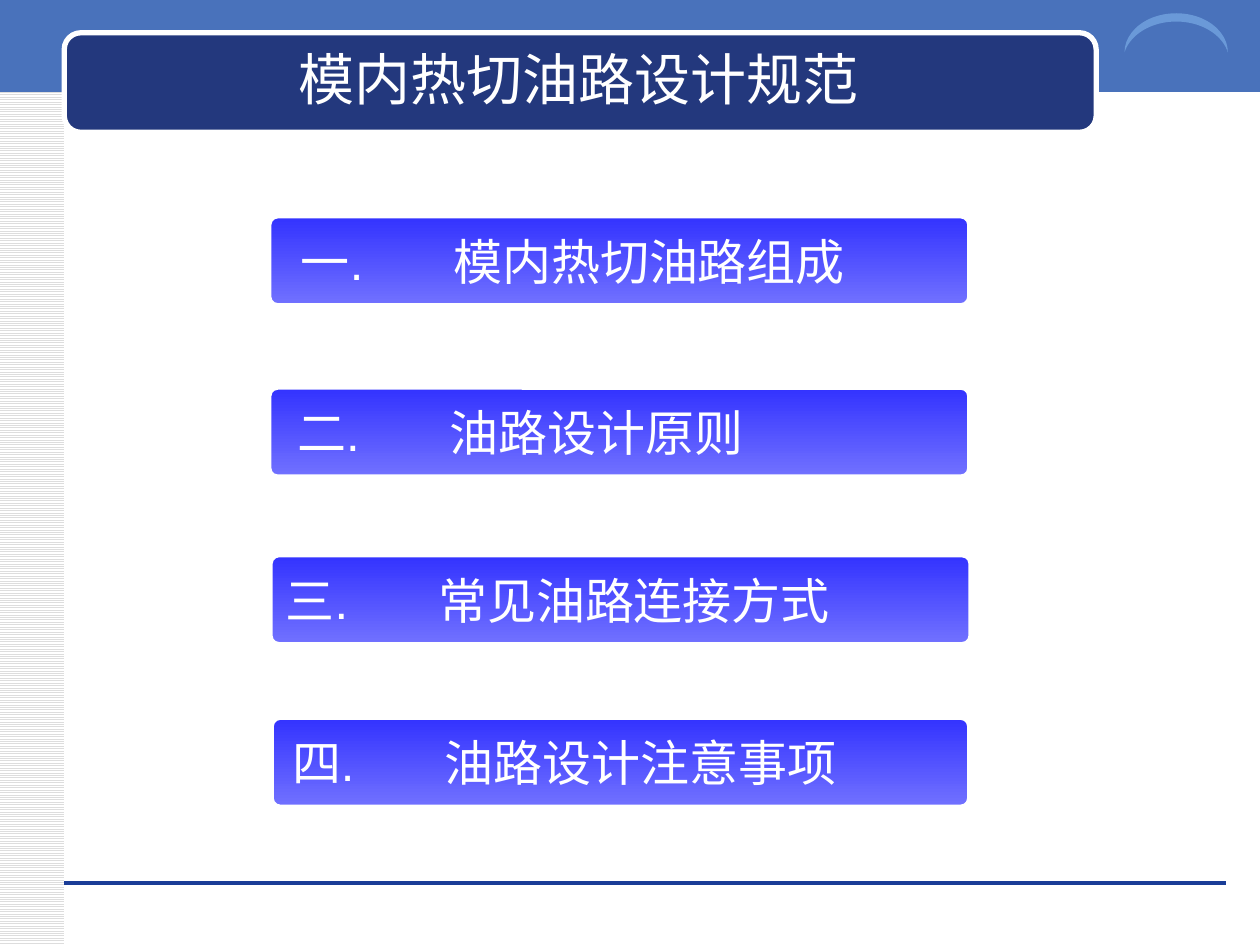
from pptx import Presentation
from pptx.dml.color import RGBColor
from pptx.enum.dml import MSO_PATTERN
from pptx.enum.shapes import MSO_CONNECTOR, MSO_SHAPE as Preset
from pptx.enum.text import MSO_ANCHOR, PP_ALIGN
from pptx.oxml.ns import qn
from pptx.util import Inches, Pt
from lxml.etree import SubElement

TITLE = "模内热切油路设计规范"
# number, topic, bar left, bar top, bar width, text left
SECTIONS = [
    ("一.", "模内热切油路组成", 2.14, 1.72, 5.55, 2.29),
    ("二.", "油路设计原则", 2.14, 3.08, 5.55, 2.26),
    ("三.", "常见油路连接方式", 2.15, 4.41, 5.55, 2.17),
    ("四.", "油路设计注意事项", 2.16, 5.7, 5.53, 2.22),
]
BAR_HEIGHT, TEXT_HEIGHT, TEXT_WIDTH, TOPIC_TAB = 0.7, 0.57, 5.44, 1.21

THEME = {
    "font": "Arial", "title_size": 32, "section_size": 28,
    "white": "FFFFFF", "stripe": "DDDDDD", "band": "4972BB", "rule": "1A3D97",
    "title_panel": "23387D", "moon": "6A99D8",
    "bar_top": "3333FF", "bar_bottom": "7171FF",
}


def color(name):
    """Return the theme colour of that name."""
    return RGBColor.from_string(THEME[name])


def add_block(shapes, preset, box, fill=None, border=None, corner=None):
    """Add a preset shape with an optional solid fill and white border."""
    block = shapes.add_shape(preset, *map(Inches, box))
    block.shadow.inherit = False
    if corner is not None:
        block.adjustments[0] = corner
    if fill:
        block.fill.solid()
        block.fill.fore_color.rgb = color(fill)
    if border:
        block.line.color.rgb = color("white")
        block.line.width = Pt(border)
    else:
        block.line.fill.background()
    return block


def add_label(shapes, box, text, size, align=PP_ALIGN.LEFT, tab=None):
    """Add a one-paragraph white label, with an optional tab stop."""
    label = shapes.add_textbox(*map(Inches, box))
    frame = label.text_frame
    frame.word_wrap = True
    frame.vertical_anchor = MSO_ANCHOR.MIDDLE
    line = frame.paragraphs[0]
    line.alignment = align
    if tab:
        stops = SubElement(line._p.get_or_add_pPr(), qn("a:tabLst"))
        SubElement(stops, qn("a:tab"), pos=str(Inches(tab)), algn="l")
    line.add_run().text = text
    line.font.name = THEME["font"]
    line.font.size = Pt(THEME[size])
    line.font.color.rgb = color("white")


def add_backdrop(shapes):
    """Add the striped margin, top band, footer rule, title panel and moon."""
    margin = add_block(shapes, Preset.RECTANGLE, (0, 0, 0.51, 7.5))
    margin.fill.patterned()
    margin.fill.pattern = MSO_PATTERN.LIGHT_HORIZONTAL
    margin.fill.fore_color.rgb = color("stripe")
    margin.fill.back_color.rgb = color("white")
    add_block(shapes, Preset.RECTANGLE, (0, -0.03, 10, 0.76), "band")
    rule = shapes.add_connector(
        MSO_CONNECTOR.STRAIGHT, *map(Inches, (0.51, 7.01, 9.73, 7.01)))
    rule.line.color.rgb = color("rule")
    rule.line.width = Pt(0)
    SubElement(rule._element.spPr, qn("a:effectLst"))
    add_block(shapes, Preset.ROUNDED_RECTANGLE, (0.51, 0.26, 8.19, 0.79),
              "title_panel", border=3, corner=0.167)
    moon = add_block(shapes, Preset.MOON, (9.18, -0.15, 0.31, 0.82), "moon", corner=0.212)
    moon.rotation = 90


def add_section(shapes, number, topic, left, top, width, text_left):
    """Add one grouped gradient bar with its number and topic."""
    group = shapes.add_group_shape().shapes
    bar = add_block(group, Preset.ROUNDED_RECTANGLE, (left, top, width, BAR_HEIGHT),
                    border=2, corner=0.091)
    bar.fill.gradient()
    bar.fill.gradient_angle = 270
    for stop, name in zip(bar.fill.gradient_stops, ("bar_top", "bar_bottom")):
        stop.color.rgb = color(name)
    text_top = top + (BAR_HEIGHT - TEXT_HEIGHT) / 2
    add_label(group, (text_left, text_top, TEXT_WIDTH, TEXT_HEIGHT),
              f"{number}\t{topic}", "section_size", tab=TOPIC_TAB)


def main():
    """Build the contents slide and save it."""
    deck = Presentation()
    deck.slide_width, deck.slide_height = Inches(10), Inches(7.5)
    shapes = deck.slides.add_slide(deck.slide_layouts[6]).shapes
    add_backdrop(shapes)
    add_label(shapes, (0.68, 0.31, 7.83, 0.62), TITLE, "title_size", PP_ALIGN.CENTER)
    for section in SECTIONS:
        add_section(shapes, *section)
    deck.save("out.pptx")


if __name__ == "__main__":
    main()
